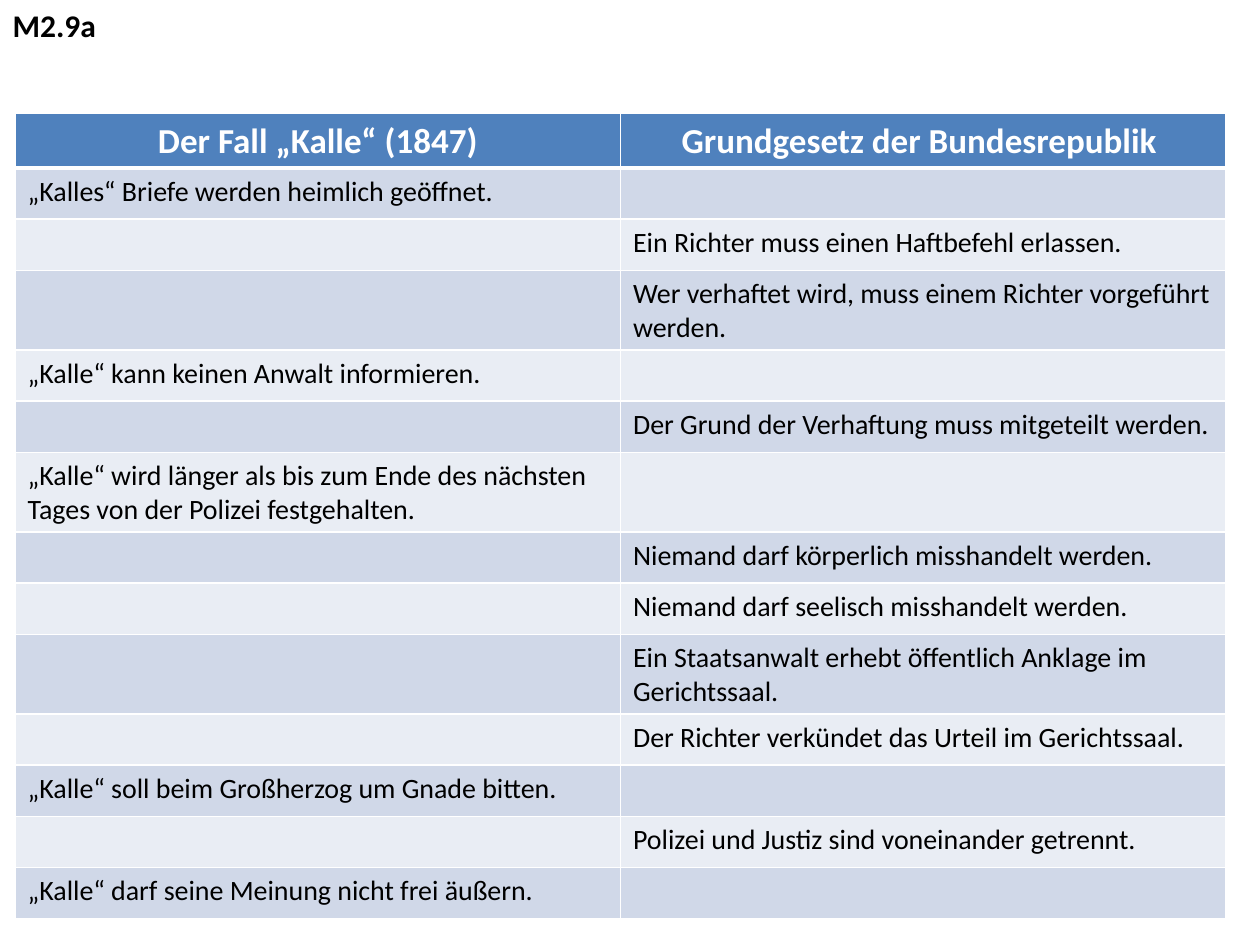
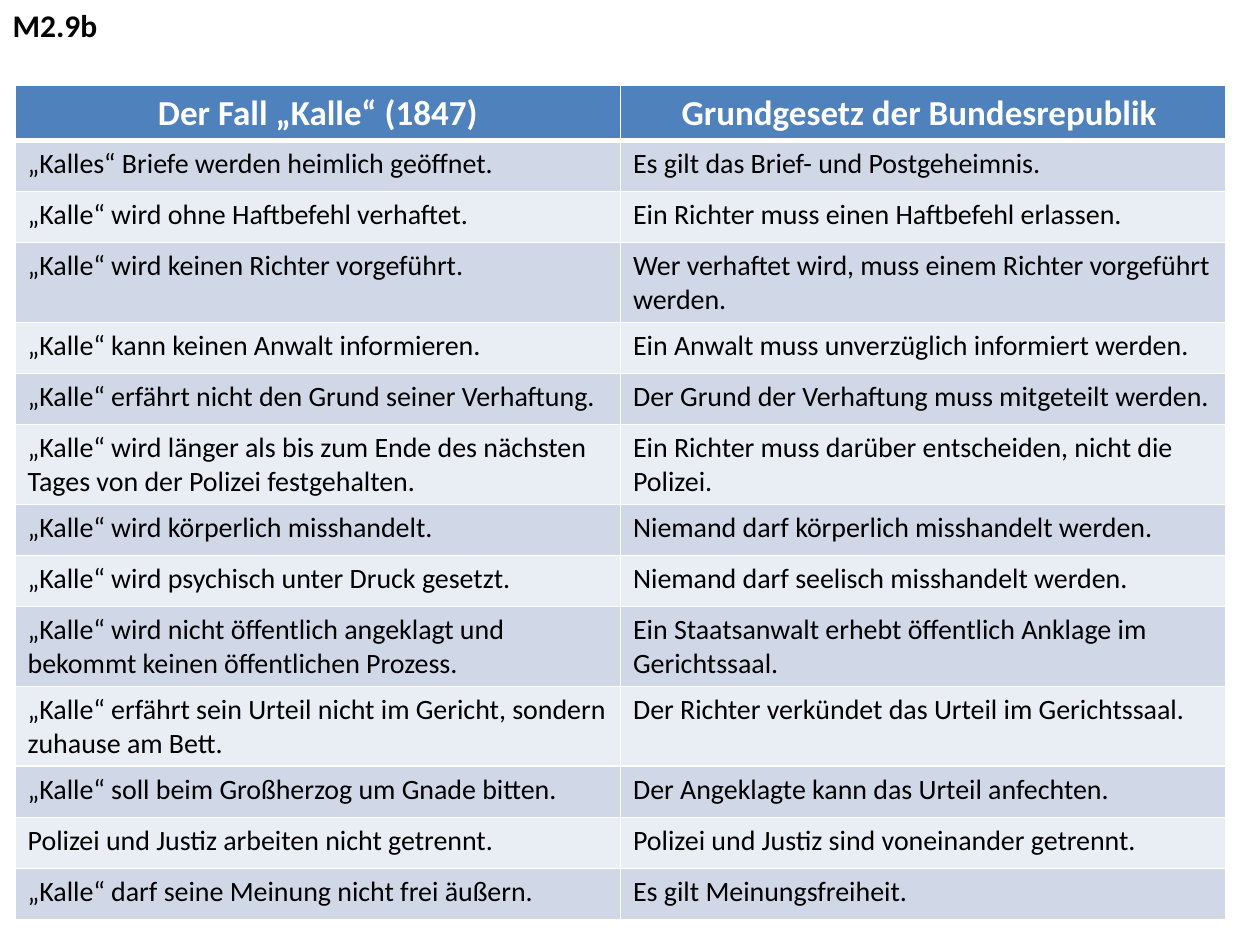
import pptx
import pptx.dml.color
import pptx.enum.text
import pptx.oxml
import pptx.oxml.ns
import pptx.util

COLORS = {
    "paper": "FFFFFF",
    "ink": "000000",
    "header": "4F81BD",
    "odd_band": "D0D8E8",
    "even_band": "E9EDF4",
}
FONT = "Calibri"
COLUMNS, ROWS = 100, 75
ROW_HEIGHT = pptx.util.Pt(29.2)
THIN, THICK = 1, 3

LABEL_STYLE = {"size": pptx.util.Pt(18), "bold": True}
HEADER_STYLE = {"size": pptx.util.Pt(20), "bold": True}
BODY_STYLE = {"size": pptx.util.Pt(16), "bold": False}

HEADINGS = ("Der Fall „Kalle“ (1847)", "Grundgesetz der Bundesrepublik ")

# Each entry: the side given on the worksheet (0 = case, 1 = constitution), then both sides.
COMPARISON = [
    (0, "„Kalles“ Briefe werden heimlich geöffnet.",
     "Es gilt das Brief- und Postgeheimnis."),
    (1, "„Kalle“ wird ohne Haftbefehl verhaftet.",
     "Ein Richter muss einen Haftbefehl erlassen."),
    (1, "„Kalle“ wird keinen Richter vorgeführt.",
     "Wer verhaftet wird, muss einem Richter vorgeführt werden."),
    (0, "„Kalle“ kann keinen Anwalt informieren.",
     "Ein Anwalt muss unverzüglich informiert werden."),
    (1, "„Kalle“ erfährt nicht den Grund seiner Verhaftung.",
     "Der Grund der Verhaftung muss mitgeteilt werden."),
    (0, "„Kalle“ wird länger als bis zum Ende des nächsten Tages von der Polizei festgehalten.",
     "Ein Richter muss darüber entscheiden, nicht die Polizei."),
    (1, "„Kalle“ wird körperlich misshandelt.",
     "Niemand darf körperlich misshandelt werden."),
    (1, "„Kalle“ wird psychisch unter Druck gesetzt.",
     "Niemand darf seelisch misshandelt werden."),
    (1, "„Kalle“ wird nicht öffentlich angeklagt und bekommt keinen öffentlichen Prozess.",
     "Ein Staatsanwalt erhebt öffentlich Anklage im Gerichtssaal."),
    (1, "„Kalle“ erfährt sein Urteil nicht im Gericht, sondern zuhause am Bett.",
     "Der Richter verkündet das Urteil im Gerichtssaal."),
    (0, "„Kalle“ soll beim Großherzog um Gnade bitten.",
     "Der Angeklagte kann das Urteil anfechten."),
    (1, "Polizei und Justiz arbeiten nicht getrennt.",
     "Polizei und Justiz sind voneinander getrennt."),
    (0, "„Kalle“ darf seine Meinung nicht frei äußern.",
     "Es gilt Meinungsfreiheit."),
]


def rgb(name):
    return pptx.dml.color.RGBColor.from_string(COLORS[name])


class Sheet:
    """Holds the shared style and the slide being built; lengths are grid units."""

    def __init__(self, deck):
        self.deck = deck
        self.slide = None

    def x(self, columns):
        return round(self.deck.slide_width * columns / COLUMNS)

    def y(self, rows):
        return round(self.deck.slide_height * rows / ROWS)

    def start(self, label):
        """Open a new slide with its label in the top left corner."""
        self.slide = self.deck.slides.add_slide(self.deck.slide_layouts[5])
        title = self.slide.shapes.title
        title.left, title.top = 0, 0
        title.width, title.height = self.x(10.6), self.y(4)
        frame = title.text_frame
        settings = {
            "word_wrap": True,
            "vertical_anchor": pptx.enum.text.MSO_ANCHOR.TOP,
            "auto_size": pptx.enum.text.MSO_AUTO_SIZE.SHAPE_TO_FIT_TEXT,
        }
        for name, value in settings.items():
            setattr(frame, name, value)
        self.add_text(frame, label, LABEL_STYLE, "ink")

    def add_text(self, frame, text, style, color, align=pptx.enum.text.PP_ALIGN.LEFT):
        paragraph = frame.paragraphs[0]
        paragraph.alignment = align
        run = paragraph.add_run()
        run.text = text
        for name, value in {"name": FONT, **style}.items():
            setattr(run.font, name, value)
        run.font.color.rgb = rgb(color)

    def border(self, cell, top, bottom):
        """Draw the four cell edges; they must precede the fill in the XML."""
        properties = cell._tc.get_or_add_tcPr()
        edges = {"lnL": THIN, "lnR": THIN, "lnT": top, "lnB": bottom}
        for edge, points in edges.items():
            properties.append(pptx.oxml.parse_xml(
                f'<a:{edge} {pptx.oxml.ns.nsdecls("a")} w="{pptx.util.Pt(points)}">'
                f'<a:solidFill><a:srgbClr val="{COLORS["paper"]}"/></a:solidFill>'
                f'</a:{edge}>'))

    def table(self, top, entries):
        lines = [HEADINGS, *entries]
        table = self.slide.shapes.add_table(
            len(lines), len(HEADINGS), self.x(1.2), self.y(top),
            self.x(96.1), ROW_HEIGHT * len(lines)).table
        for number, line in enumerate(lines):
            table.rows[number].height = ROW_HEIGHT
            for side, text in enumerate(line):
                cell = table.cell(number, side)
                self.border(cell, THICK if number == 1 else THIN,
                            THICK if number == 0 else THIN)
                band = "odd_band" if number % 2 else "even_band"
                cell.fill.solid()
                cell.fill.fore_color.rgb = rgb(band if number else "header")
                if number == 0:
                    self.add_text(cell.text_frame, text, HEADER_STYLE, "paper",
                                  pptx.enum.text.PP_ALIGN.CENTER)
                elif text:
                    self.add_text(cell.text_frame, text, BODY_STYLE, "ink")


def main():
    deck = pptx.Presentation()
    deck.slide_width = pptx.util.Inches(10)
    deck.slide_height = pptx.util.Inches(7.5)
    sheet = Sheet(deck)

    sheet.start("M2.9a")
    sheet.table(9, [[text if side == given else "" for side, text in enumerate(pair)]
                    for given, *pair in COMPARISON])

    sheet.start("M2.9b")
    sheet.table(6.8, [pair for _, *pair in COMPARISON])

    deck.save("out.pptx")


if __name__ == "__main__":
    main()
